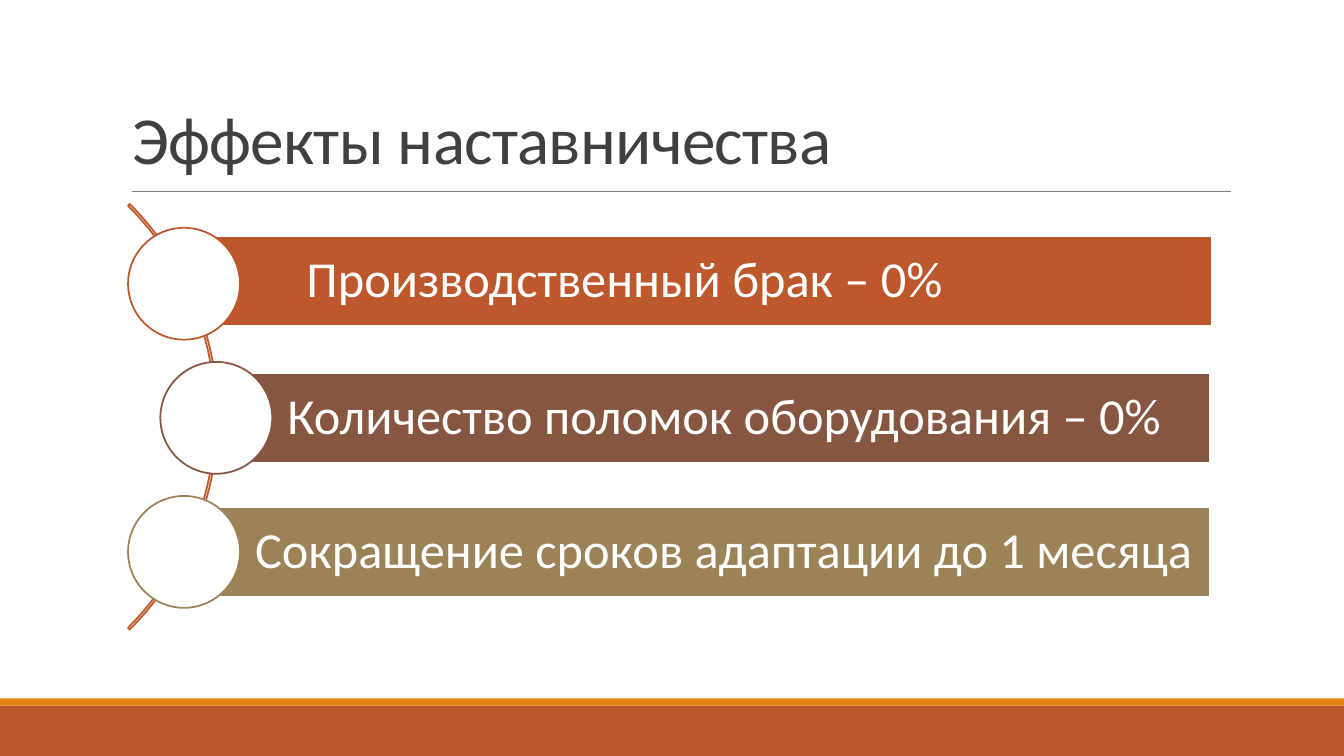
from dataclasses import dataclass

from lxml import etree
from pptx import Presentation
from pptx.dml.color import RGBColor
from pptx.enum.shapes import MSO_CONNECTOR as Connector, MSO_SHAPE as Shape
from pptx.enum.text import MSO_ANCHOR as Anchor, PP_ALIGN as Align
from pptx.oxml.ns import qn
from pptx.util import Inches, Pt


@dataclass(frozen=True)
class Theme:
    font: str = "Calibri"
    title_size: float = 48
    bar_size: float = 36
    outline: float = 1.25
    rule_width: float = 0.5
    white: str = "FFFFFF"
    title: str = "404040"
    rule: str = "808080"
    rust: str = "BD582C"
    orange: str = "E48312"
    brown: str = "865640"
    olive: str = "9B8357"


theme = Theme()


def add_figure(preset, left, top, width, height, fill=None, line=None):
    shape = slide.shapes.add_shape(
        preset, Inches(left), Inches(top), Inches(width), Inches(height))
    shape.shadow.inherit = False
    if fill:
        shape.fill.solid()
        shape.fill.fore_color.rgb = RGBColor.from_string(fill)
    else:
        shape.fill.background()
    if line:
        shape.line.color.rgb = RGBColor.from_string(line)
        shape.line.width = Pt(theme.outline)
    else:
        shape.line.fill.background()
    return shape


def format_paragraph(paragraph, size, color, spacing):
    paragraph.alignment = Align.LEFT
    paragraph.line_spacing = spacing
    paragraph.font.name = theme.font
    paragraph.font.size = Pt(size)
    paragraph.font.color.rgb = RGBColor.from_string(color)


presentation = Presentation()
presentation.slide_width = Inches(13.33)
presentation.slide_height = Inches(7.5)
slide = presentation.slides.add_slide(presentation.slide_layouts[5])

# Footer bands
add_figure(Shape.RECTANGLE, 0, 7, 13.33, 0.5, theme.rust)
add_figure(Shape.RECTANGLE, 0, 6.93, 13.33, 0.07, theme.orange)

# Rule under the title
rule = slide.shapes.add_connector(
    Connector.STRAIGHT, Inches(1.31), Inches(1.9), Inches(12.21), Inches(1.9))
rule.line.color.rgb = RGBColor.from_string(theme.rule)
rule.line.width = Pt(theme.rule_width)
etree.SubElement(rule._element.spPr, qn("a:effectLst"))

# Title
title = slide.shapes.title
title.left, title.top = Inches(1.21), Inches(1.04)
title.width, title.height = Inches(11), Inches(0.78)
title.text_frame.text = "Эффекты наставничества"
title.text_frame.word_wrap = True
title.text_frame.vertical_anchor = Anchor.BOTTOM
title_paragraph = title.text_frame.paragraphs[0]
format_paragraph(title_paragraph, theme.title_size, theme.title, 0.85)
title_paragraph.runs[0]._r.get_or_add_rPr().set("spc", "-50")

# Arc behind the effects
arc = add_figure(Shape.BLOCK_ARC, -3.81, 1.15, 5.97, 5.97, line=theme.rust)
for index, value in enumerate((189, 27, 0.004)):
    arc.adjustments[index] = value

# Effects: text, colour, bar left, top and right, text inset, circle left
effects = [
    ("Производственный брак – 0%", theme.rust, 1.89, 2.34, 12.02, 1.15, 1.27),
    ("Количество поломок оборудования – 0%", theme.brown, 2.15, 3.7, 12, 0.7, 1.59),
    ("Сокращение сроков адаптации до 1 месяца", theme.olive, 1.83, 5.03, 12, 0.7, 1.27),
]
for row, (text, color, left, top, right, inset, circle_left) in enumerate(effects):
    bar = add_figure(
        Shape.RECTANGLE, left, top, right - left, 0.89, color, theme.white)
    frame = bar.text_frame
    frame.text = text
    frame.word_wrap = True
    frame.vertical_anchor = Anchor.MIDDLE
    frame.margin_left = Inches(inset)
    frame.margin_right = frame.margin_top = frame.margin_bottom = Inches(0.1)
    format_paragraph(frame.paragraphs[0], theme.bar_size, theme.white, 0.9)
    add_figure(
        Shape.OVAL, circle_left, 2.26 + 1.33 * row, 1.11, 1.11, theme.white, color)

presentation.save("out.pptx")
